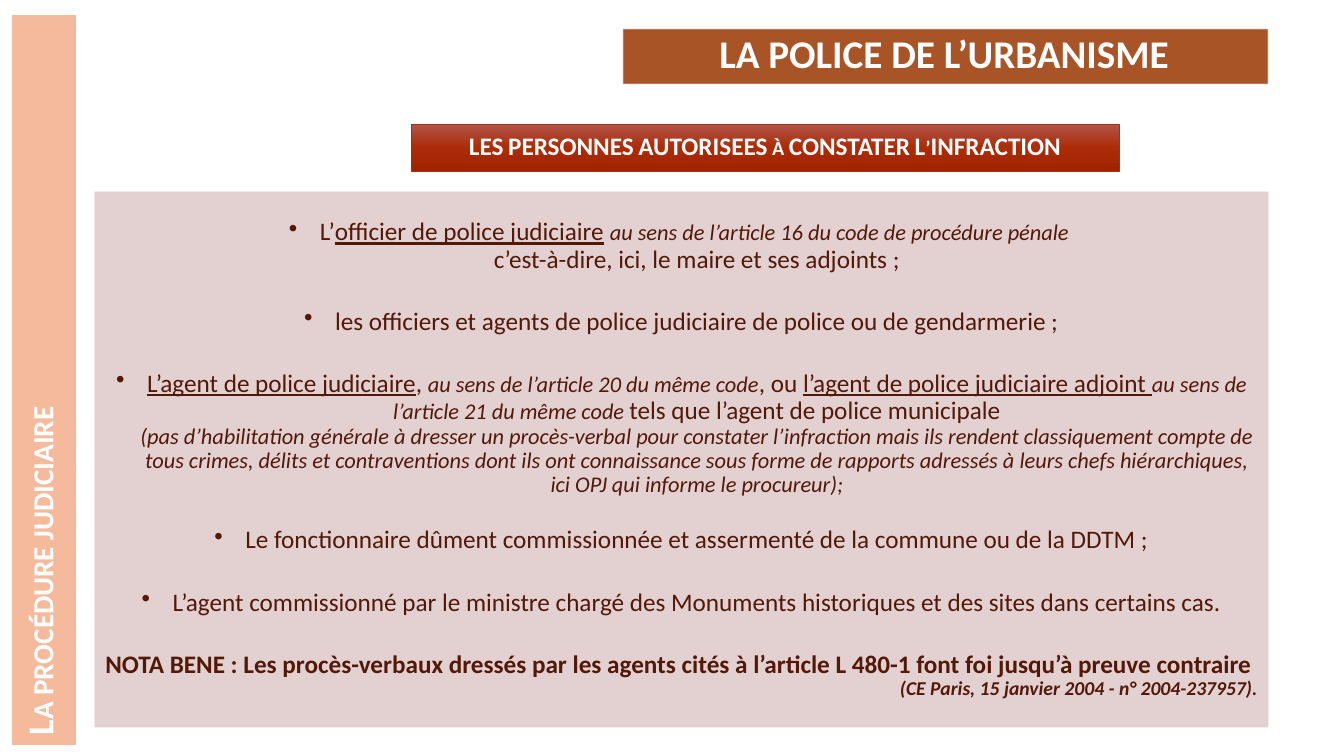
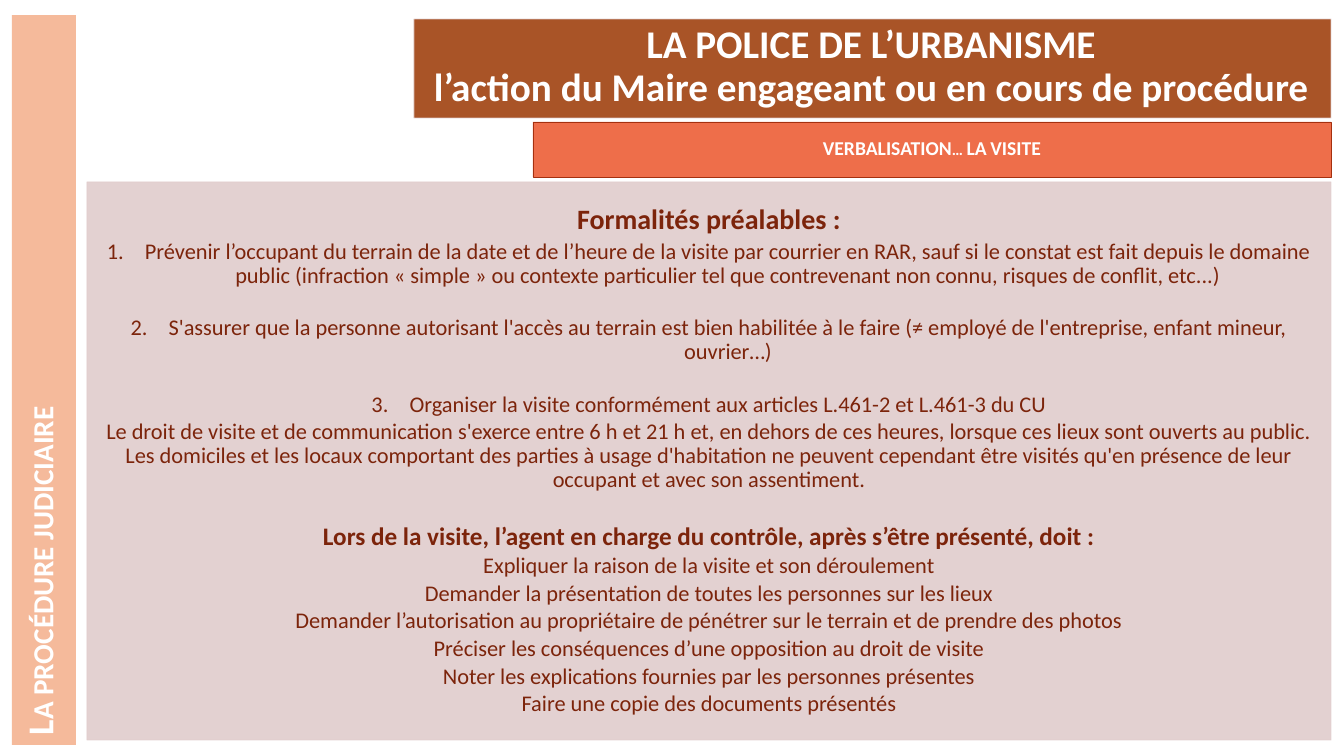
import copy

import pptx
import pptx.dml.color
import pptx.enum.shapes
import pptx.enum.text
import pptx.oxml
import pptx.oxml.ns
import pptx.util

RGB = pptx.dml.color.RGBColor
WHITE = RGB(0xFF, 0xFF, 0xFF)
BROWN = RGB(0xA0, 0x42, 0x10)
PINK = RGB(0xE1, 0xCD, 0xCC)
PEACH = RGB(0xF5, 0xBA, 0x9B)
CORAL = RGB(0xEE, 0x6E, 0x4A)
RUST = RGB(0xA5, 0x30, 0x0F)
DARK = RGB(0x52, 0x18, 0x08)
RED = RGB(0x7C, 0x24, 0x0B)
SHADES = [(0, RGB(0xB1, 0x55, 0x4C)), (0.5, RGB(0xAC, 0x2C, 0x08)),
          (1, RGB(0xA0, 0x23, 0x00))]

PX = 914400 / 100.8
FONT = "Calibri"
ALIGN = pptx.enum.text.PP_ALIGN
ANCHOR = pptx.enum.text.MSO_ANCHOR
qn = pptx.oxml.ns.qn

BULLET = '<a:buChar %s char="•"/>' % pptx.oxml.ns.nsdecls("a")
NUMBER = '<a:buAutoNum %s type="arabicPeriod"/>' % pptx.oxml.ns.nsdecls("a")


def dress(shape, place, fill, line=None, alpha=None, anchor=ANCHOR.MIDDLE):
    """Place a shape, colour it and ready its text frame."""
    shape.left, shape.top, shape.width, shape.height = [round(n * PX) for n in place]
    shape.fill.solid()
    shape.fill.fore_color.rgb = fill
    if line is None:
        shape.line.fill.background()
    else:
        shape.line.color.rgb = line
        shape.line.width = pptx.util.Pt(0.5)
    if alpha:
        for tint in shape._element.spPr.iter(qn("a:srgbClr")):
            tint.append(pptx.oxml.parse_xml(
                '<a:alpha %s val="%d"/>' % (pptx.oxml.ns.nsdecls("a"), alpha * 1000)))
    frame = shape.text_frame
    frame.word_wrap = True
    frame.auto_size = pptx.enum.text.MSO_AUTO_SIZE.NONE
    frame.vertical_anchor = anchor
    return frame


def write(frame, runs, size, color, bold=False, align=ALIGN.CENTER,
          after=None, mark=None, indent=0, small=False):
    """Add a paragraph of (text, style) runs; u underlines, a number sets an italic size."""
    par = frame.paragraphs[0]
    if par.runs:
        par = frame.add_paragraph()
    par.alignment = align
    par.line_spacing = 0.9
    par.space_before = pptx.util.Pt(0)
    par.space_after = pptx.util.Pt(size * 0.15 if after is None else after)
    props = par._p.get_or_add_pPr()
    if mark:
        props.set("marL", str(round(indent * PX)))
        props.set("indent", str(round(-indent * PX)))
        props.append(pptx.oxml.parse_xml(mark))
    font = par.font
    font.name, font.size, font.bold = FONT, pptx.util.Pt(size), bold
    font.color.rgb = color
    if small:
        props.find(qn("a:defRPr")).set("cap", "small")
    for text, style in runs:
        for row, part in enumerate(text.split("\n")):
            if row:
                par.add_line_break()
            if not part:
                continue
            run = par.add_run()
            run.text = part
            if style == "u":
                run.font.underline = True
            elif style:
                run.font.italic = True
                run.font.size = pptx.util.Pt(style)


deck = pptx.Presentation()
deck.slide_width, deck.slide_height = round(1344 * PX), round(756 * PX)

# Title, title place, subtitle, subtitle place, subtitle size, panel place
heads = [
    ("LA POLICE DE L’URBANISME", (623, 29, 645, 55),
     "LES PERSONNES AUTORISEES à CONSTATER L’INFRACTION", (411, 124, 708, 47), 18,
     (95, 192, 1173, 535)),
    ("LA POLICE DE L’URBANISME\nl’action du Maire engageant ou en cours de procédure",
     (414, 19, 917, 99),
     "VERBALISATION… LA VISITE", (533, 122, 798, 55), 14,
     (87, 182, 1244, 558)),
]
panels = []
subs = []
for title, spot, sub, strip, size, area in heads:
    slide = deck.slides.add_slide(deck.slide_layouts[5])
    frame = dress(slide.shapes.title, spot, BROWN, PINK, 90, ANCHOR.TOP)
    frame.margin_left = frame.margin_top = round(6 * PX)
    frame.margin_right, frame.margin_bottom = round(9 * PX), round(10 * PX)
    write(frame, [(title, None)], 28, WHITE, bold=True)

    label, panel, side = [
        slide.shapes.add_shape(pptx.enum.shapes.MSO_SHAPE.RECTANGLE, 0, 0, 0, 0)
        for _ in range(3)]
    for shape in (label, panel, side):
        shape.shadow.inherit = False
    frame = dress(label, strip, CORAL, RUST)
    write(frame, [(sub, None)], size, WHITE, bold=True, small=True)
    subs.append(label)
    panels.append(dress(panel, area, PINK, PINK, 90))

    frame = dress(side, (12, 15, 64, 730), PEACH, anchor=ANCHOR.TOP)
    frame._txBody.bodyPr.set("vert", "vert270")
    write(frame, [("La procédure judiciaire", None)], 26, WHITE, bold=True,
          align=ALIGN.LEFT, after=0, small=True)
    frame.paragraphs[0].line_spacing = 1.0

# The first subtitle is shaded from top to bottom
fill = subs[0].fill
fill.gradient()
fill.gradient_angle = 270
stops = subs[0]._element.spPr.find(qn("a:gradFill")).find(qn("a:gsLst"))
stops.append(copy.deepcopy(stops[-1]))
for stop, (place, color) in zip(fill.gradient_stops, SHADES):
    stop.position = place
    stop.color.rgb = color

people = [
    ([("L’", None), ("officier de police judiciaire", "u"), (" ", None),
      ("au sens de l’article 16 du code de procédure pénale \n", 16),
      ("c’est-à-dire, ici, le maire et ses adjoints ;", None)], 25),
    ([("les officiers et agents de police judiciaire de police ou de gendarmerie ;",
       None)], 25),
    ([("L’agent de police judiciaire", "u"), (", ", None),
      ("au sens de l’article 20 du même code", 16), (", ou ", None),
      ("l’agent de police judiciaire adjoint ", "u"),
      ("au sens de l’article 21 du même code ", 16),
      ("tels que l’agent de police municipale\n", None),
      ("(pas d’habilitation générale à dresser un procès-verbal pour constater "
       "l’infraction mais ils rendent classiquement compte de tous crimes, délits et "
       "contraventions dont ils ont connaissance sous forme de rapports adressés à "
       "leurs chefs hiérarchiques, ici OPJ qui informe le procureur);", 16)], 21),
    ([("Le fonctionnaire dûment commissionnée et assermenté de la commune ou de la "
       "DDTM ;", None)], 25),
    ([("L’agent commissionné par le ministre chargé des Monuments historiques et des "
       "sites dans certains cas.", None)], 25),
]
for runs, gap in people:
    write(panels[0], runs, 18, DARK, after=gap, mark=BULLET, indent=31)
write(panels[0], [
    ("NOTA BENE : Les procès-verbaux dressés par les agents cités à l’article L 480-1 "
     "font foi jusqu’à preuve contraire \n", None),
    ("(CE Paris, 15 janvier 2004 - n° 2004-237957).", 14)],
    18, DARK, bold=True, align=ALIGN.RIGHT)

steps = [
    ("Prévenir l’occupant du terrain de la date et de l’heure de la visite par courrier "
     "en RAR, sauf si le constat est fait depuis le domaine public (infraction "
     "« simple » ou contexte particulier tel que contrevenant non connu, risques de "
     "conflit, etc...)", 20),
    ("S'assurer que la personne autorisant l'accès au terrain est bien habilitée à le "
     "faire (≠ employé de l'entreprise, enfant mineur, ouvrier…)", 20),
    ("Organiser la visite conformément aux articles L.461-2 et L.461-3 du CU", None),
]
duties = [
    "Expliquer la raison de la visite et son déroulement",
    "Demander la présentation de toutes les personnes sur les lieux",
    "Demander l’autorisation au propriétaire de pénétrer sur le terrain et de prendre "
    "des photos",
    "Préciser les conséquences d’une opposition au droit de visite",
    "Noter les explications fournies par les personnes présentes",
    "Faire une copie des documents présentés",
]
visit = panels[1]
write(visit, [("Formalités préalables :", None)], 20, RED, bold=True)
for text, gap in steps:
    write(visit, [(text, None)], 16, RED, after=gap, mark=NUMBER, indent=38)
write(visit, [
    ("Le droit de visite et de communication s'exerce entre 6 h et 21 h et, en dehors de "
     "ces heures, lorsque ces lieux sont ouverts au public. Les domiciles et les locaux "
     "comportant des parties à usage d'habitation ne peuvent cependant être visités "
     "qu'en présence de leur occupant et avec son assentiment.", None)],
    16, RED, after=22)
write(visit, [("Lors de la visite, l’agent en charge du contrôle, après s’être présenté, "
               "doit :", None)], 18, RED, bold=True)
for text in duties:
    write(visit, [(text, None)], 16, RED)

deck.save("out.pptx")
